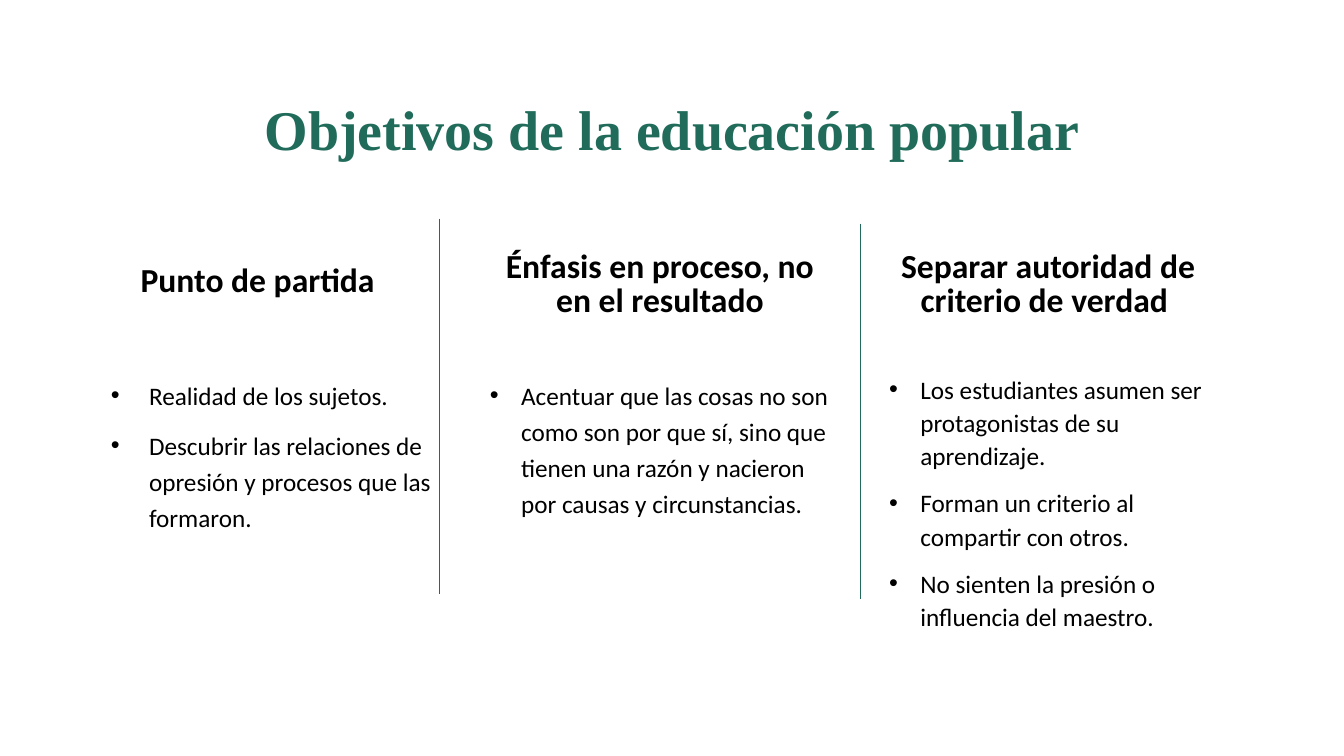
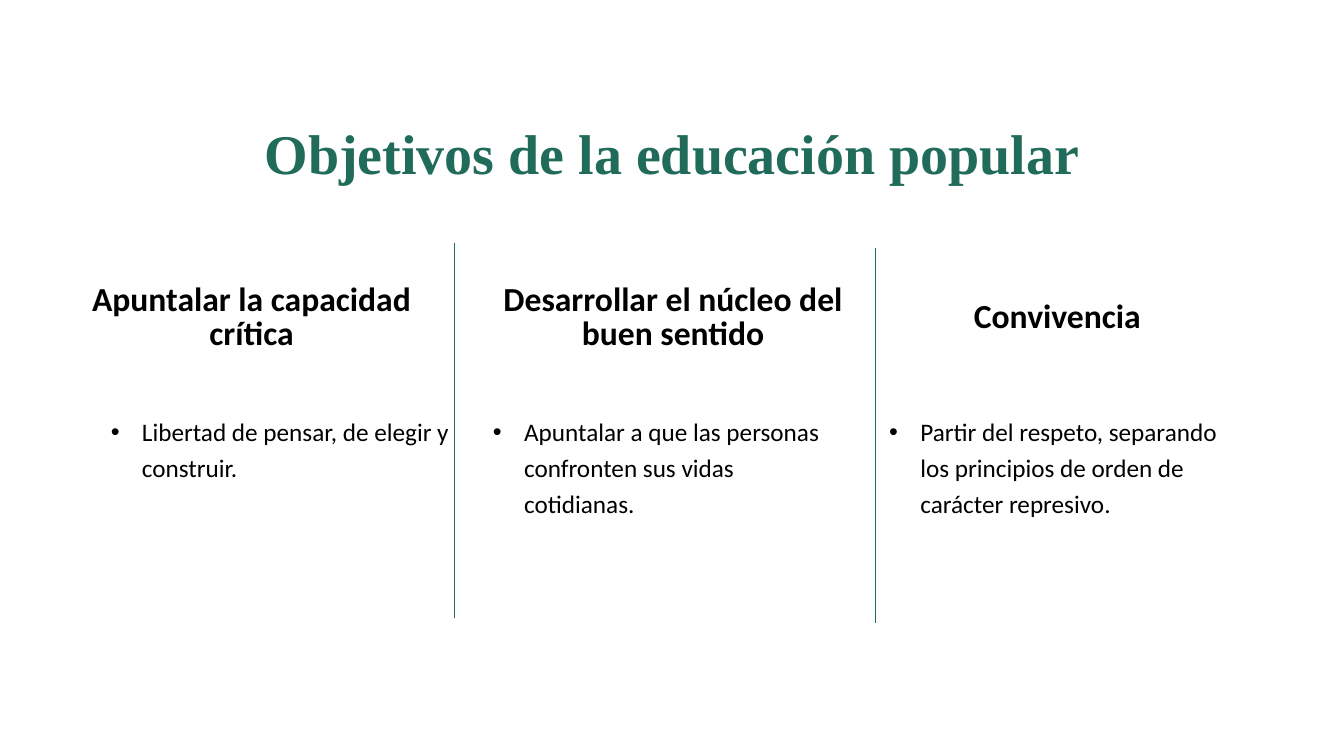
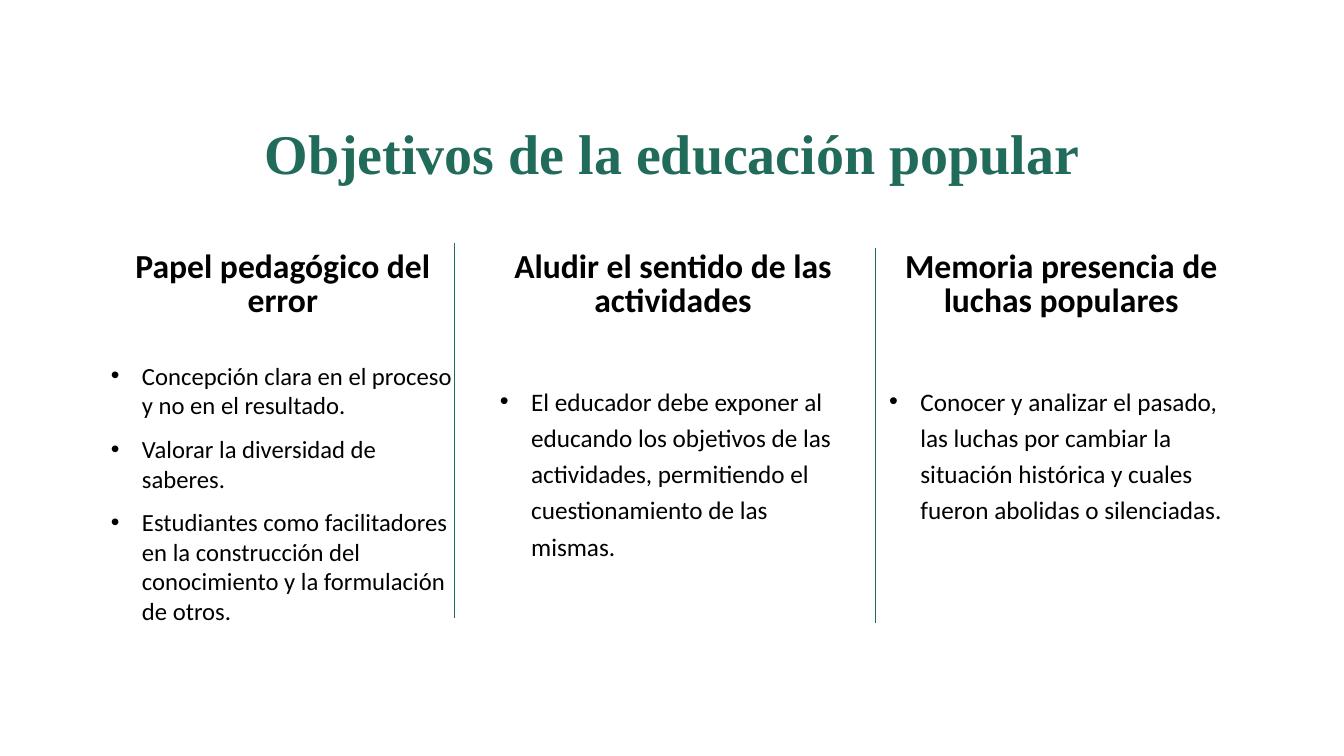
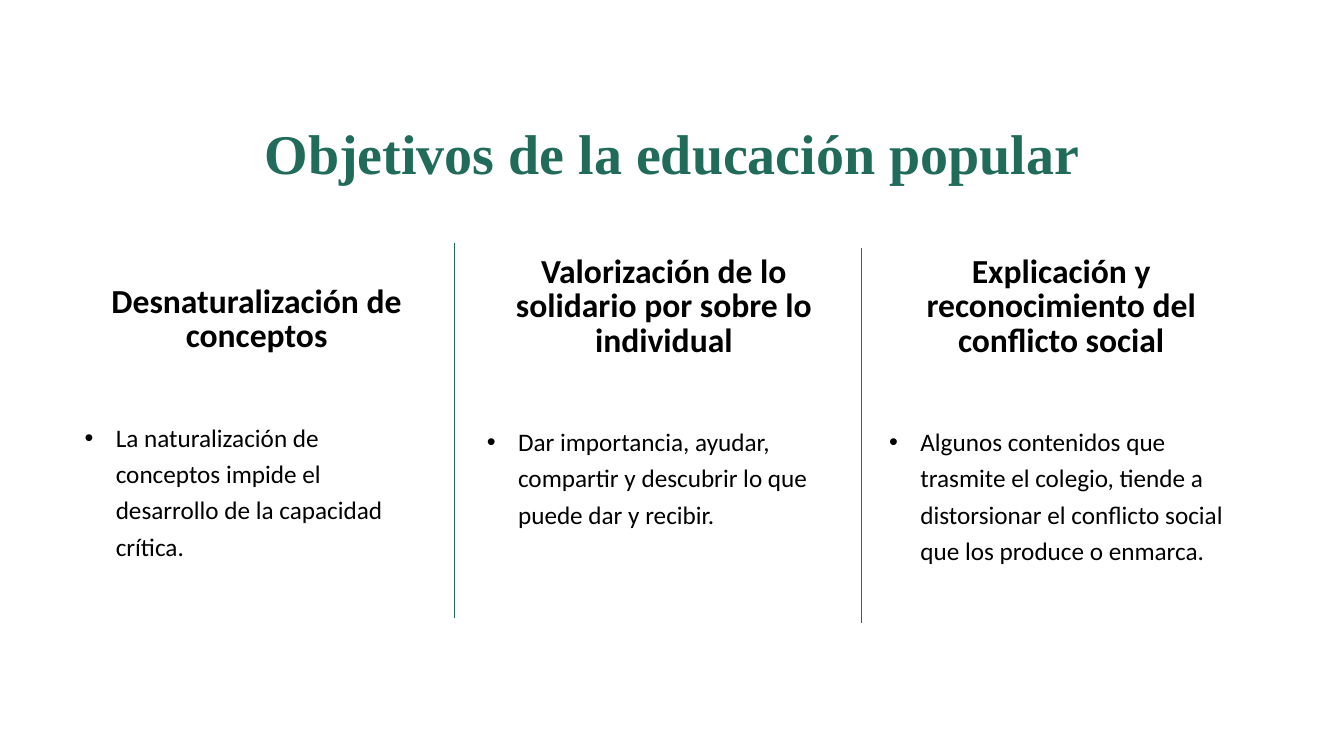
import dataclasses

import lxml.etree
import pptx
import pptx.dml.color
import pptx.enum.shapes
import pptx.enum.text
import pptx.oxml
import pptx.oxml.ns
import pptx.util

SLIDE_WIDTH, SLIDE_HEIGHT = 13.33, 7.5
GREEN, BLACK, WHITE = "206B5A", "000000", "FFFFFF"
TITLE = "Objetivos de la educación popular"
TITLE_FONT, TEXT_FONT = "Times New Roman", "Calibri"
COLUMN_WIDTH, HEADING_HEIGHT, BODY_HEIGHT = 3.61, 0.63, 2.6
DIVIDER_DROP, DIVIDER_STEP, DIVIDER_HEIGHT = 1.74, 0.05, 3.72
LAST_COLUMN = 8.72


@dataclasses.dataclass
class Column:
    """One objective: its heading, its points and where both stand."""
    heading: str
    points: list
    heading_at: tuple
    points_at: tuple
    size: float = 18
    spacing: float = 1.2
    indent: float = 0.31


@dataclasses.dataclass
class Objectives:
    """One slide of three objectives."""
    title_top: float
    dividers: tuple
    columns: list


SLIDES = [
    Objectives(0.43, (4.36, 8.53), [
        Column("Punto de partida",
               ["Realidad de los sujetos.",
                "Descubrir las relaciones de opresión y procesos que las formaron."],
               (0.75, 2.39), (1, 3.66), indent=0.38),
        Column("Énfasis en proceso, no en el resultado",
               ["Acentuar que las cosas no son como son por que sí, sino que tienen "
                "una razón y nacieron por causas y circunstancias."],
               (4.74, 2.59), (4.76, 3.66)),
        Column("Separar autoridad de criterio de verdad ",
               ["Los estudiantes asumen ser protagonistas de su aprendizaje.",
                "Forman un criterio al compartir con otros.",
                "No sienten la presión o influencia del maestro."],
               (8.59, 2.59), (LAST_COLUMN, 3.63), spacing=1.1),
    ]),
    Objectives(0.67, (4.51, 8.68), [
        Column("Apuntalar la capacidad crítica",
               ["Libertad de pensar, de elegir y construir."],
               (0.69, 2.92), (1, 4.02)),
        Column("Desarrollar el núcleo del buen sentido",
               ["Apuntalar a que las personas confronten sus vidas cotidianas."],
               (4.87, 2.92), (4.79, 4.02)),
        Column("Convivencia ",
               ["Partir del respeto, separando los principios de orden de carácter "
                "represivo."],
               (LAST_COLUMN, 2.75), (LAST_COLUMN, 4.02)),
    ]),
    Objectives(0.67, (4.51, 8.68), [
        Column("Papel pedagógico del error",
               ["Concepción clara en el proceso y no en el resultado.",
                "Valorar la diversidad de saberes.",
                "Estudiantes como facilitadores en la construcción del conocimiento y "
                "la formulación de otros."],
               (1, 2.59), (1, 3.53), size=17.6, spacing=1.0),
        Column("Aludir el sentido de las actividades",
               ["El educador debe exponer al educando los objetivos de las actividades, "
                "permitiendo el cuestionamiento de las mismas."],
               (4.87, 2.59), (4.86, 3.72)),
        Column("Memoria presencia de luchas populares",
               ["Conocer y analizar el pasado, las luchas por cambiar la situación "
                "histórica y cuales fueron abolidas o silenciadas."],
               (LAST_COLUMN, 2.59), (LAST_COLUMN, 3.72)),
    ]),
    Objectives(0.67, (4.51, 8.54), [
        Column("Desnaturalización de conceptos",
               ["La naturalización de conceptos impide el desarrollo de la capacidad "
                "crítica."],
               (0.74, 2.94), (0.74, 4.08)),
        Column("Valorización de lo solidario por sobre lo individual",
               ["Dar importancia, ayudar, compartir y descubrir lo que puede dar y "
                "recibir."],
               (4.78, 2.98), (4.73, 4.12)),
        Column("Explicación y reconocimiento del conflicto social",
               ["Algunos contenidos que trasmite el colegio, tiende a distorsionar el "
                "conflicto social que los produce o enmarca."],
               (LAST_COLUMN, 2.98), (LAST_COLUMN, 4.12)),
    ]),
]


def inches(*lengths):
    """Turn lengths in inches into slide units."""
    return [pptx.util.Inches(length) for length in lengths]


def color(value):
    """Turn a hex string into a colour."""
    return pptx.dml.color.RGBColor.from_string(value)


def add_xml(parent, tag, **attributes):
    """Append a drawing element to a parent and return it."""
    return lxml.etree.SubElement(parent, pptx.oxml.ns.qn(tag), attributes)


def format_runs(paragraph, font_name, size, value, bold=False):
    """Set the font of every run in a paragraph."""
    for run in paragraph.runs:
        run.font.name = font_name
        run.font.size = pptx.util.Pt(size)
        run.font.bold = bold
        run.font.color.rgb = color(value)


def outline_text(run, value, width):
    """Draw a line around the letters of a run."""
    properties = run.font._element
    line = add_xml(properties, "a:ln", w=str(pptx.util.Pt(width)))
    add_xml(add_xml(line, "a:solidFill"), "a:srgbClr", val=value)
    properties.insert(0, line)


def add_bullet(paragraph, indent):
    """Give a paragraph a hanging black bullet."""
    properties = paragraph._p.get_or_add_pPr()
    hanging = pptx.util.Inches(indent)
    properties.set("marL", str(hanging))
    properties.set("indent", str(-hanging))
    add_xml(add_xml(properties, "a:buClr"), "a:srgbClr", val=BLACK)
    add_xml(properties, "a:buFont", typeface="Arial")
    add_xml(properties, "a:buChar", char="•")


def place_title(slide, top):
    """Fill, move and format the title placeholder."""
    title = slide.shapes.title
    title.left, title.top, title.width, title.height = inches(
        1, top, SLIDE_WIDTH - 2, 1.76)
    frame = title.text_frame
    frame.text = TITLE
    frame.auto_size = pptx.enum.text.MSO_AUTO_SIZE.NONE
    frame.vertical_anchor = pptx.enum.text.MSO_ANCHOR.MIDDLE
    paragraph = frame.paragraphs[0]
    paragraph.alignment = pptx.enum.text.PP_ALIGN.CENTER
    paragraph.line_spacing = 0.9
    format_runs(paragraph, TITLE_FONT, 40, GREEN, bold=True)
    outline_text(paragraph.runs[0], WHITE, 0.75)


def add_text(slide, position, height, lines):
    """Add a wrapped text box one column wide and return its frame."""
    frame = slide.shapes.add_textbox(*inches(*position, COLUMN_WIDTH, height)).text_frame
    frame.word_wrap = True
    frame.text = "\n".join(lines)
    return frame


def add_heading(slide, column):
    """Add the centred heading of a column."""
    frame = add_text(slide, column.heading_at, HEADING_HEIGHT, [column.heading])
    frame.vertical_anchor = pptx.enum.text.MSO_ANCHOR.BOTTOM
    paragraph = frame.paragraphs[0]
    paragraph.alignment = pptx.enum.text.PP_ALIGN.CENTER
    paragraph.line_spacing = 0.85
    format_runs(paragraph, TEXT_FONT, 24, BLACK, bold=True)


def add_points(slide, column):
    """Add the bulleted points of a column."""
    frame = add_text(slide, column.points_at, BODY_HEIGHT, column.points)
    for index, paragraph in enumerate(frame.paragraphs):
        add_bullet(paragraph, column.indent)
        paragraph.line_spacing = column.spacing
        paragraph.space_before = pptx.util.Pt(10 if index else 0)
        format_runs(paragraph, TEXT_FONT, column.size, BLACK)


def add_divider(slide, x, top):
    """Add a thin vertical line between two columns."""
    divider = slide.shapes.add_connector(
        pptx.enum.shapes.MSO_CONNECTOR.STRAIGHT,
        *inches(x, top, x, top + DIVIDER_HEIGHT))
    divider.line.color.rgb = color(GREEN)
    divider.line.width = pptx.util.Pt(0.75)
    add_xml(divider._element.spPr, "a:effectLst")


def add_objectives(presentation, objectives):
    """Add one slide with its title, columns and dividers."""
    slide = presentation.slides.add_slide(presentation.slide_layouts[5])
    place_title(slide, objectives.title_top)
    for column in objectives.columns:
        add_heading(slide, column)
        add_points(slide, column)
    for index, x in enumerate(objectives.dividers):
        add_divider(slide, x, objectives.title_top + DIVIDER_DROP + index * DIVIDER_STEP)


def main():
    """Build and save the presentation."""
    presentation = pptx.Presentation()
    presentation.slide_width, presentation.slide_height = inches(SLIDE_WIDTH, SLIDE_HEIGHT)
    for objectives in SLIDES:
        add_objectives(presentation, objectives)
    presentation.save("out.pptx")


if __name__ == "__main__":
    main()
